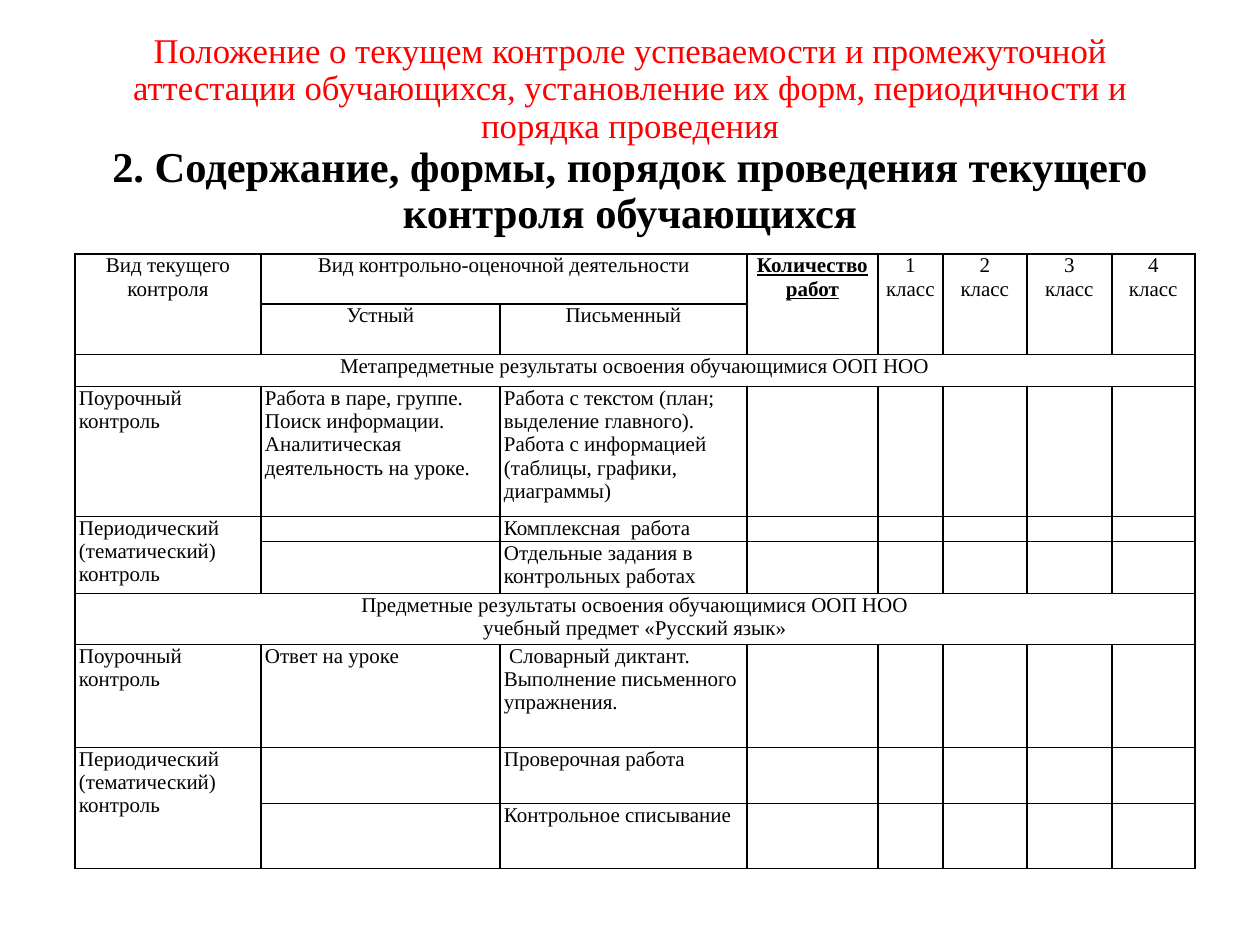
import itertools
import pptx
import pptx.dml.color
import pptx.enum.text
import pptx.oxml
import pptx.oxml.ns
import pptx.util

FONT = "Times New Roman"
CENTER = pptx.enum.text.PP_ALIGN.CENTER
LEFT = pptx.enum.text.PP_ALIGN.LEFT


def px(value):
    return pptx.util.Emu(round(value * 914400 / 126))


def color(value):
    return pptx.dml.color.RGBColor.from_string(value)


presentation = pptx.Presentation()
presentation.slide_width = px(1260)
presentation.slide_height = px(945)
slide = presentation.slides.add_slide(presentation.slide_layouts[6])

title = slide.shapes.add_textbox(px(87), px(37), px(1086), px(197))
title.text_frame.word_wrap = True
title.text_frame.vertical_anchor = pptx.enum.text.MSO_ANCHOR.MIDDLE
paragraph = title.text_frame.paragraphs[0]
paragraph.alignment = CENTER
paragraph.line_spacing = 0.9
title_parts = [
    ("Положение о текущем контроле успеваемости и промежуточной аттестации "
     "обучающихся, установление их форм, периодичности и порядка проведения", 19.8, "FF0000", False),
    ("2. Содержание, формы, порядок проведения текущего контроля обучающихся", 24.3, "000000", True),
]
for index, (text, size, hue, bold) in enumerate(title_parts):
    if index:
        paragraph.add_line_break()
    run = paragraph.add_run()
    run.text = text
    run.font.name = FONT
    run.font.size = pptx.util.Pt(size)
    run.font.color.rgb = color(hue)
    run.font.bold = bold

column_widths = [186, 239, 247, 131, 65, 84, 85, 83]
row_heights = [50, 47, 32, 130, 25, 52, 51, 103, 56, 65]
lesson = "Поурочный контроль"
periodic = "Периодический (тематический) контроль"
rows = [
    ["Вид текущего контроля", "Вид контрольно-оценочной деятельности", "", "Количество работ"]
    + [f"{grade}\nкласс" for grade in range(1, 5)],
    ["", "Устный", "Письменный"],
    ["Метапредметные результаты освоения обучающимися ООП НОО"],
    [lesson, "Работа в паре, группе. Поиск информации.\nАналитическая деятельность на уроке.",
     "Работа с текстом (план; выделение главного). Работа с информацией (таблицы, графики, диаграммы)"],
    [periodic, "", "Комплексная  работа"],
    ["", "", "Отдельные задания в контрольных работах"],
    ["Предметные результаты освоения обучающимися ООП НОО\nучебный предмет «Русский язык»"],
    [lesson, "Ответ на уроке", " Словарный диктант.\nВыполнение письменного упражнения."],
    [periodic, "", "Проверочная работа"],
    ["", "", "Контрольное списывание"],
]
centered_rows = {0, 1, 2, 6}

table = slide.shapes.add_table(
    len(rows), len(column_widths), px(75), px(254), px(sum(column_widths)), px(sum(row_heights))
).table
table.first_row = False
table.horz_banding = False
for column, width in zip(table.columns, column_widths):
    column.width = px(width)
for row, height in zip(table.rows, row_heights):
    row.height = px(height)

for row_index, column_index in itertools.product(range(len(rows)), range(len(column_widths))):
    cell = table.cell(row_index, column_index)
    texts = rows[row_index]
    cell.text = texts[column_index] if column_index < len(texts) else ""
    cell.margin_left = cell.margin_right = px(4)
    cell.margin_top = cell.margin_bottom = 0
    for paragraph in cell.text_frame.paragraphs:
        paragraph.alignment = CENTER if row_index in centered_rows else LEFT
        paragraph.font.name = FONT
        paragraph.font.size = pptx.util.Pt(12)
        paragraph.font.color.rgb = color("000000")
        if not paragraph.runs:
            paragraph._p.get_or_add_endParaRPr().set("sz", "1200")
    properties = cell._tc.get_or_add_tcPr()
    for side in ("lnL", "lnR", "lnT", "lnB"):
        properties.append(pptx.oxml.parse_xml(
            f'<a:{side} {pptx.oxml.ns.nsdecls("a")} w="12700"><a:solidFill>'
            f'<a:srgbClr val="000000"/></a:solidFill></a:{side}>'
        ))
    cell.fill.background()

quantity_font = table.cell(0, 3).text_frame.paragraphs[0].font
quantity_font.bold = True
quantity_font.underline = True

merges = [(0, 1, 0, 2), (2, 0, 2, 7), (6, 0, 6, 7), (4, 0, 5, 0), (8, 0, 9, 0)]
merges += [(0, column_index, 1, column_index) for column_index in (0, 3, 4, 5, 6, 7)]
for top, left, bottom, right in merges:
    table.cell(top, left).merge(table.cell(bottom, right))

presentation.save("out.pptx")
